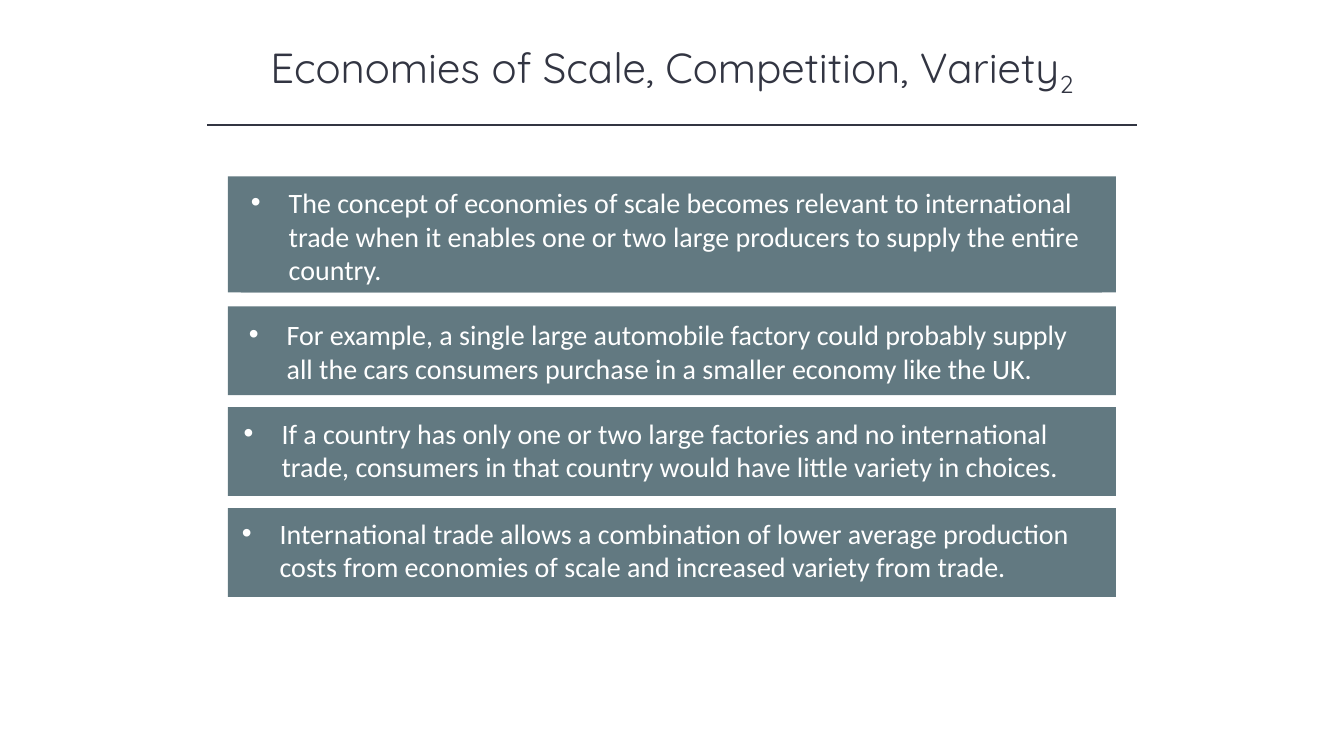
from lxml.etree import SubElement
from pptx import Presentation
from pptx.dml.color import RGBColor
from pptx.enum.shapes import MSO_CONNECTOR, MSO_SHAPE
from pptx.enum.text import MSO_ANCHOR, MSO_AUTO_SIZE, PP_ALIGN
from pptx.oxml.ns import qn
from pptx.util import Pt

INK = "323542"
SLATE = "627981"
WHITE = "FFFFFF"
BAND_LEFT, BAND_WIDTH = 162.75, 634.3
TEXT_WIDTH = 614.9
INDENT = 27

BANDS = [
    (126, 82.8, 9.4, 2.9, 79.9,
     "The concept of economies of scale becomes relevant to international trade "
     "when it enables one or two large producers to supply the entire country."),
    (218.9, 63.4, 7.9, 4.3, 55.4,
     "For example, a single large automobile factory could probably supply all "
     "the cars consumers purchase in a smaller economy like the UK."),
    (290.9, 63.4, 4.3, 2.9, 55.4,
     "If a country has only one or two large factories and no international "
     "trade, consumers in that country would have little variety in choices."),
    (362.9, 63.4, 2.9, 2.2, 55.4,
     "International trade allows a combination of lower average production "
     "costs from economies of scale and increased variety from trade."),
]


def color(value):
    return RGBColor.from_string(value)


def style_font(font, name, size, value):
    font.name = name
    font.size = Pt(size)
    font.color.rgb = color(value)


def add_heading(page, left, top, width, height):
    title = page.shapes.title
    title.left, title.top = Pt(left), Pt(top)
    title.width, title.height = Pt(width), Pt(height)
    frame = title.text_frame
    frame.word_wrap = True
    frame.auto_size = MSO_AUTO_SIZE.NONE
    frame.vertical_anchor = MSO_ANCHOR.MIDDLE
    para = frame.paragraphs[0]
    para.alignment = PP_ALIGN.CENTER
    for text in ("Economies of Scale, Competition, Variety", "2"):
        span = para.add_run()
        span.text = text
        style_font(span.font, "Quicksand", 30, INK)
    para.runs[-1].font._element.set("baseline", "-25000")

    center = left + width / 2
    rule_y = top + 61.2
    rule = page.shapes.add_connector(
        MSO_CONNECTOR.STRAIGHT,
        Pt(center - 332), Pt(rule_y), Pt(center + 332), Pt(rule_y))
    rule.line.color.rgb = color(INK)
    rule.line.width = Pt(1)
    SubElement(rule._element.spPr, qn("a:effectLst"))


def add_panel(group, left, top, width, height):
    panel = group.shapes.add_shape(
        MSO_SHAPE.RECTANGLE, Pt(left), Pt(top), Pt(width), Pt(height))
    panel.shadow.inherit = False
    panel.fill.solid()
    panel.fill.fore_color.rgb = color(SLATE)
    panel.line.fill.background()
    return panel


def add_band(page, left, top, width, height, shift, drop, text_height, text):
    group = page.shapes.add_group_shape()
    add_panel(group, left, top, width, height)
    box = add_panel(group, left + shift, top + drop, TEXT_WIDTH, text_height)
    frame = box.text_frame
    frame.word_wrap = True
    frame.vertical_anchor = MSO_ANCHOR.TOP
    frame.text = text
    para = frame.paragraphs[0]
    para.alignment = PP_ALIGN.LEFT
    properties = para._p.get_or_add_pPr()
    properties.set("marL", str(Pt(INDENT)))
    properties.set("indent", str(-Pt(INDENT)))
    SubElement(properties, qn("a:buFont"), typeface="Arial")
    SubElement(properties, qn("a:buChar"), char="•")
    style_font(para.runs[0].font, "Calibri", 20, WHITE)


def main():
    deck = Presentation()
    deck.slide_width, deck.slide_height = Pt(960), Pt(540)
    page = deck.slides.add_slide(deck.slide_layouts[5])
    add_heading(page, 120, 28.1, 720, 43.9)
    for top, height, shift, drop, text_height, text in BANDS:
        add_band(page, BAND_LEFT, top, BAND_WIDTH, height,
                 shift, drop, text_height, text)
    deck.save("out.pptx")


if __name__ == "__main__":
    main()
